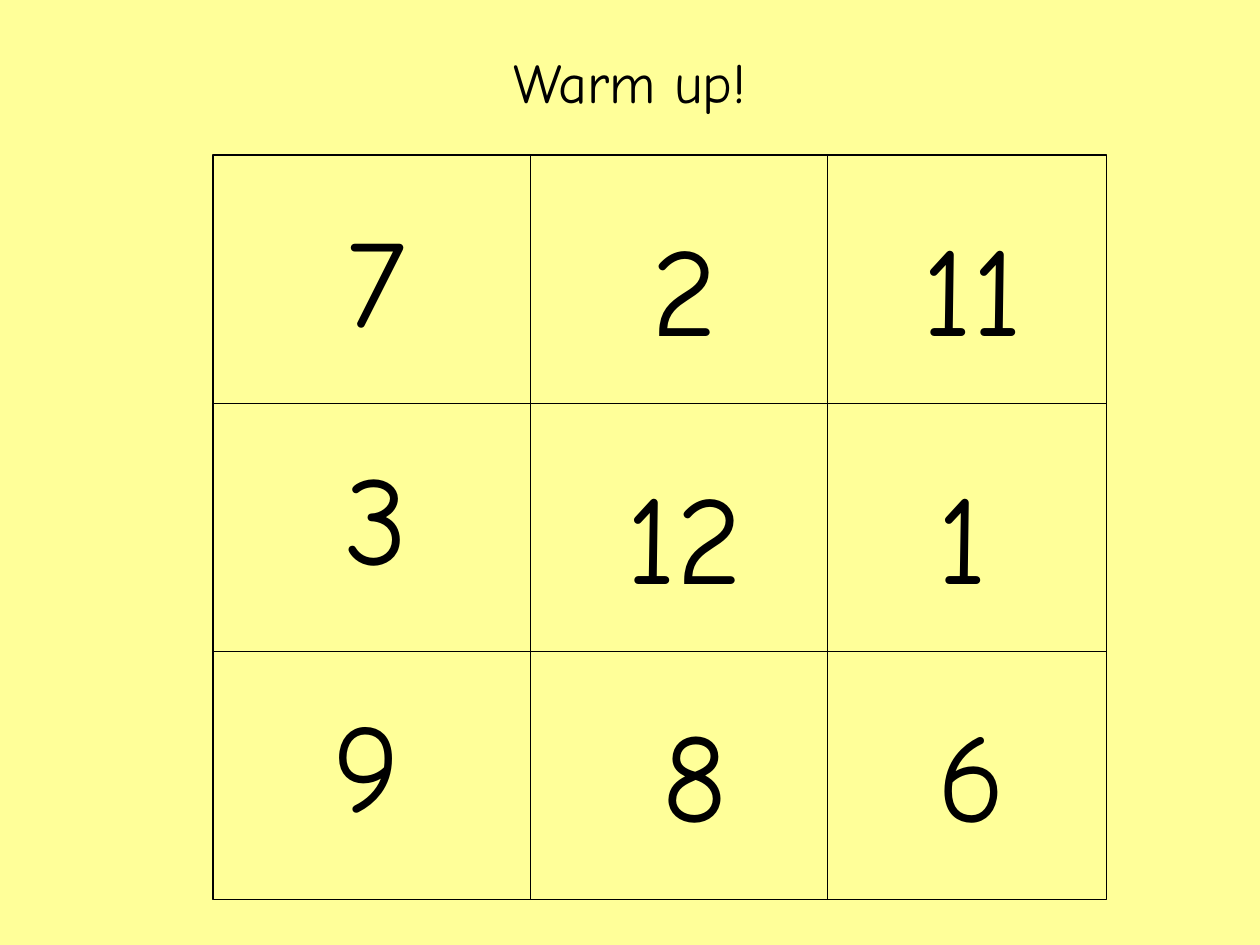
"""Build a warm-up slide with a three by three grid of numbers."""
import pptx
import pptx.dml.color
import pptx.enum.shapes
import pptx.enum.text
import pptx.oxml
import pptx.util
from pptx.util import Inches

FONT = "Comic Neue"
INK = "000000"
PAPER = "FFFF99"
GRID_LEFT, GRID_TOP, GRID_WIDTH, GRID_HEIGHT = 1.69, 1.23, 7.09, 5.91
COLUMN_EDGES = (4.21, 6.57)
NUMBER_WIDTH, NUMBER_HEIGHT = 1.65, 1.3
NUMBERS = (
    ("7", 2.16, 1.55), ("2", 4.61, 1.62), ("11", 6.89, 1.62),
    ("3", 2.16, 3.44), ("12", 4.61, 3.59), ("1", 6.81, 3.59),
    ("9", 2.09, 5.4), ("8", 4.69, 5.48), ("6", 6.89, 5.48),
)


def color(value):
    """Return the colour for a hex string."""
    return pptx.dml.color.RGBColor.from_string(value)


def add_text(slide, text, left, top, width, height, size, anchor):
    """Add a centred line of text."""
    box = slide.shapes.add_textbox(
        Inches(left), Inches(top), Inches(width), Inches(height))
    frame = box.text_frame
    frame.text = text
    frame.word_wrap = True
    frame.vertical_anchor = anchor
    para = frame.paragraphs[0]
    para.alignment = pptx.enum.text.PP_ALIGN.CENTER
    span = para.runs[0]
    span.font.name = FONT
    span.font.size = pptx.util.Pt(size)
    span.font.color.rgb = color(INK)


def style_line(line):
    """Give a line the thin stroke of the grid."""
    line.color.rgb = color(INK)
    line.width = pptx.util.Pt(0.75)


def add_frame(slide):
    """Add the unfilled outer rectangle of the grid."""
    frame = slide.shapes.add_shape(
        pptx.enum.shapes.MSO_SHAPE.RECTANGLE, Inches(GRID_LEFT),
        Inches(GRID_TOP), Inches(GRID_WIDTH), Inches(GRID_HEIGHT))
    frame.shadow.inherit = False
    frame.fill.background()
    style_line(frame.line)


def add_rule(slide, start_x, start_y, end_x, end_y):
    """Add a straight dividing line without a shadow."""
    rule = slide.shapes.add_connector(
        pptx.enum.shapes.MSO_CONNECTOR.STRAIGHT, Inches(start_x),
        Inches(start_y), Inches(end_x), Inches(end_y))
    style_line(rule.line)
    properties = rule._element.spPr
    properties.append(pptx.oxml.parse_xml(
        '<a:effectLst xmlns:a='
        '"http://schemas.openxmlformats.org/drawingml/2006/main"/>'))


def add_grid(slide):
    """Add the frame with its column and row dividers."""
    add_frame(slide)
    for x in COLUMN_EDGES:
        add_rule(slide, x, GRID_TOP, x, GRID_TOP + GRID_HEIGHT)
    for row in (1, 2):
        y = GRID_TOP + row * GRID_HEIGHT / 3
        add_rule(slide, GRID_LEFT, y, GRID_LEFT + GRID_WIDTH, y)


def main():
    """Build and save the deck."""
    deck = pptx.Presentation()
    deck.slide_width = Inches(10)
    deck.slide_height = Inches(7.5)
    slide = deck.slides.add_slide(deck.slide_layouts[6])
    slide.background.fill.solid()
    slide.background.fill.fore_color.rgb = color(PAPER)
    anchors = pptx.enum.text.MSO_ANCHOR
    add_text(slide, "Warm up!", 0.5, 0.3, 9, 0.69, 32, anchors.MIDDLE)
    add_grid(slide)
    for number, left, top in NUMBERS:
        add_text(slide, number, left, top, NUMBER_WIDTH, NUMBER_HEIGHT,
                 72, anchors.TOP)
    deck.save("out.pptx")


if __name__ == "__main__":
    main()
